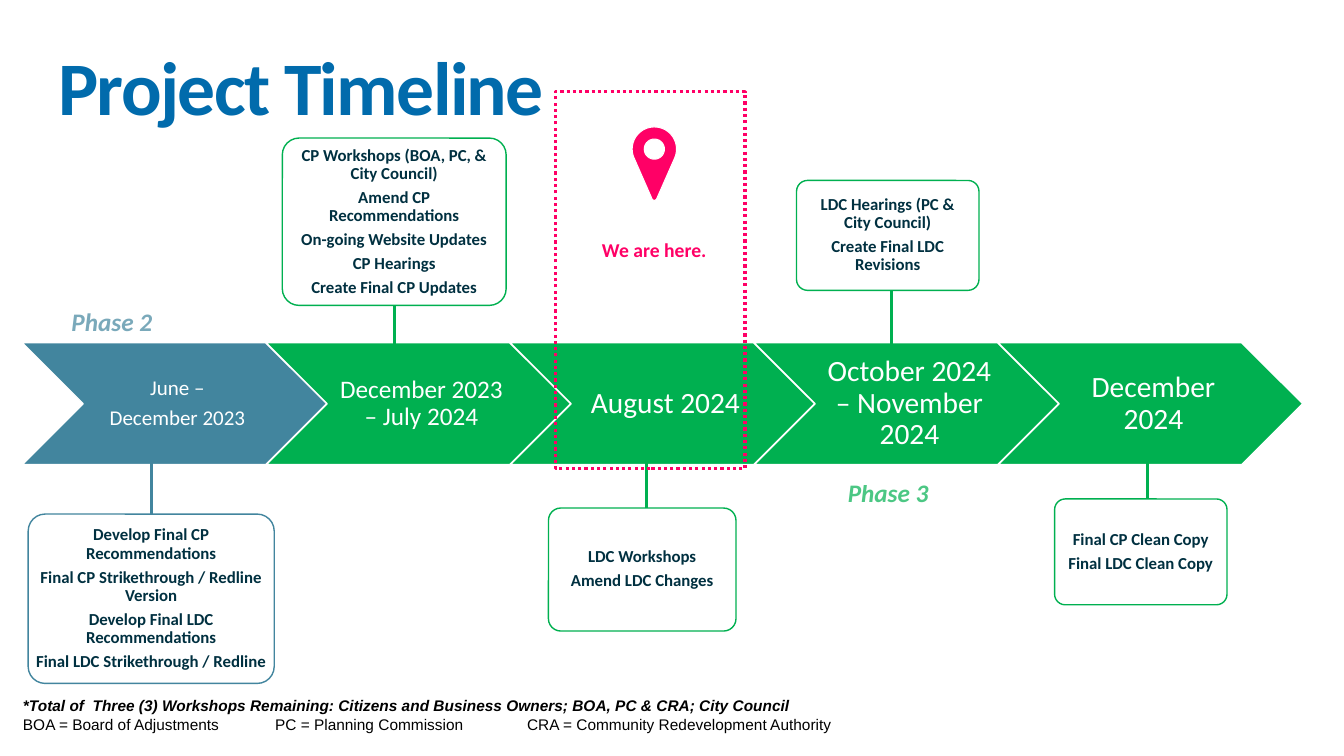
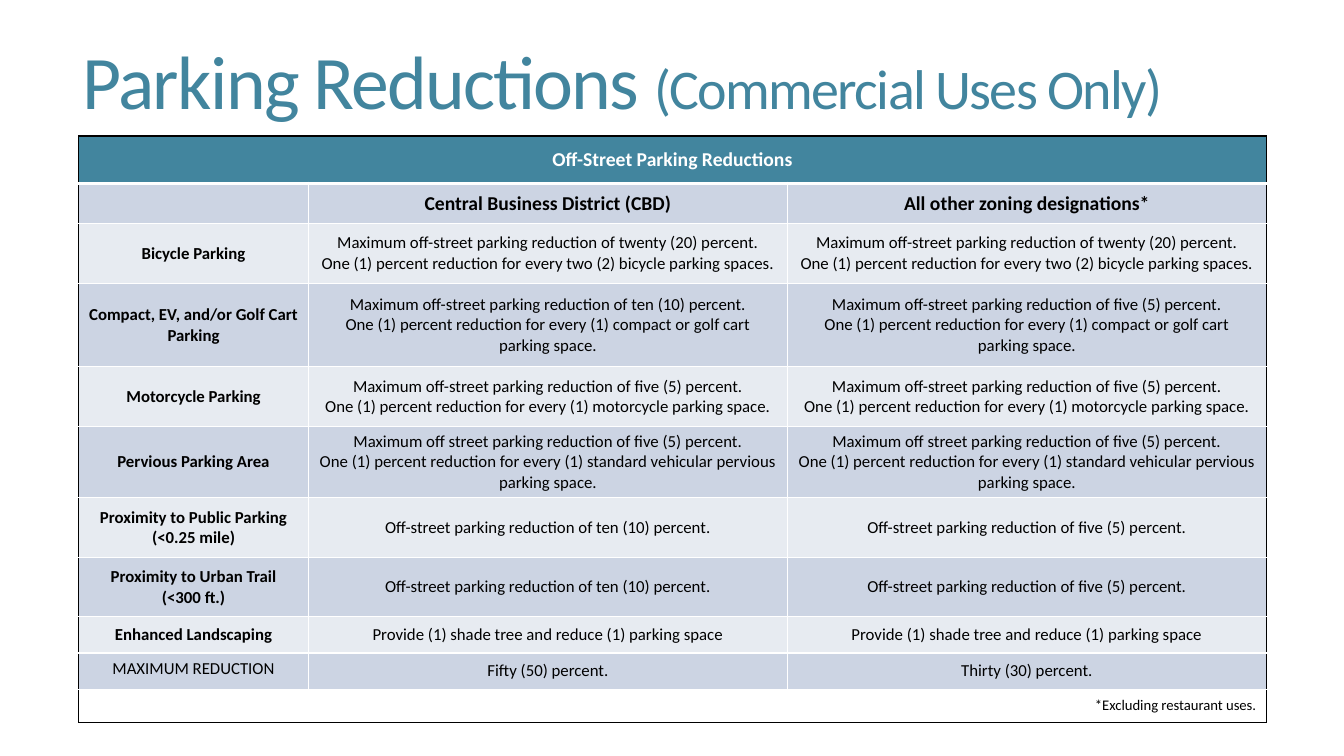
from dataclasses import dataclass, replace
from math import cos, radians, sin
from typing import Any, NamedTuple

from lxml.etree import SubElement
from pptx import Presentation
from pptx.dml.color import RGBColor as Rgb
from pptx.enum.dml import MSO_LINE as Dash
from pptx.enum.shapes import MSO_CONNECTOR as Link, MSO_SHAPE as Kind
from pptx.enum.text import MSO_ANCHOR as Anchor, PP_ALIGN as Align
from pptx.oxml.ns import qn
from pptx.util import Inches, Pt

# Shared colours and formats
HUES = {
    "blue": "016BAC", "teal": "42859E", "green": "00B050", "pink": "FF0066",
    "navy": "003040", "white": "FFFFFF", "black": "000000",
    "dark": "CCD4E3", "light": "E7EBF1",
}


@dataclass(frozen=True)
class Look:
    size: float
    hue: str = "black"
    bold: bool = False
    italic: bool = False
    face: str = "Calibri"
    track: int = 0
    alpha: int = 100


class Box(NamedTuple):
    left: float
    top: float
    width: float
    height: float


class Step(NamedTuple):
    hue: str
    size: float
    lines: list[str]


class Card(NamedTuple):
    box: Box
    hue: str
    pad: float
    stem: float
    end: float
    lines: list[str]


class Row(NamedTuple):
    height: float
    label: list[str]
    core: list[str]
    other: list[str]


TITLE = Look(54, "teal", track=-120)
NOTE = Look(11, face="Arial")
PHASE = Look(18, bold=True, italic=True, alpha=70)
CENTER = {"alignment": Align.CENTER}


# Drawing tools
def put(item: Any, form: dict[str, Any]) -> None:
    for name, value in form.items():
        setattr(item, name, value)


def tone(hue: str) -> Rgb:
    return Rgb.from_string(HUES[hue])


def paint(fill: Any, hue: str) -> None:
    fill.solid()
    fill.fore_color.rgb = tone(hue)


def fade(node: Any, alpha: int) -> None:
    color = next(node.iter(qn("a:srgbClr")))
    SubElement(color, qn("a:alpha")).set("val", str(alpha * 1000))


def pads(left: float, top: float, right: float, low: float) -> dict[str, Any]:
    sides = ("left", "top", "right", "bottom")
    return {f"margin_{side}": Inches(gap) for side, gap in zip(sides, (left, top, right, low))}


def add_run(para: Any, text: str, look: Look) -> None:
    run = para.add_run()
    run.text = text
    put(run.font, {"name": look.face, "size": Pt(look.size),
                   "bold": look.bold, "italic": look.italic})
    run.font.color.rgb = tone(look.hue)
    if look.track:
        run._r.get_or_add_rPr().set("spc", str(look.track))
    if look.alpha < 100:
        fade(run._r, look.alpha)


def write(frame: Any, lines: list[str], look: Look, form: dict[str, Any]) -> None:
    for num, text in enumerate(lines):
        para = frame.add_paragraph() if num else frame.paragraphs[0]
        put(para, form)
        add_run(para, text, look)


def add_text(slide: Any, box: Box, lines: list[str], look: Look,
             form: dict[str, Any] | None = None) -> Any:
    frame = slide.shapes.add_textbox(*map(Inches, box)).text_frame
    frame.word_wrap = True
    write(frame, lines, look, form or {})
    return frame


def add_title(slide: Any, box: Box, parts: list[tuple[str, Look]]) -> None:
    frame = add_text(slide, box, [], TITLE)
    frame.vertical_anchor = Anchor.MIDDLE
    para = frame.paragraphs[0]
    para.line_spacing = 0.85
    for text, look in parts:
        add_run(para, text, look)


def add_form(slide: Any, kind: Kind, box: Box, line: str, width: float,
             fill: str | None = None) -> Any:
    shape = slide.shapes.add_shape(kind, *map(Inches, box))
    shape.shadow.inherit = False
    if fill:
        paint(shape.fill, fill)
    else:
        shape.fill.background()
    paint(shape.line.fill, line)
    shape.line.width = Pt(width)
    return shape


def fill_form(shape: Any, lines: list[str], look: Look, inset: dict[str, Any]) -> None:
    frame = shape.text_frame
    put(frame, {"word_wrap": True, "vertical_anchor": Anchor.MIDDLE} | inset)
    gap = Pt(round(look.size * 0.35, 2))
    write(frame, lines, look, CENTER | {"line_spacing": 0.9, "space_after": gap})


# Timeline slide
STEP, BAND = 2.42, 3.4
STEPS = [
    Step("teal", 15, ["June –", "December 2023"]),
    Step("green", 18, ["December 2023 – July 2024"]),
    Step("green", 21, ["August 2024"]),
    Step("green", 21, ["October 2024 – November 2024"]),
    Step("green", 21, ["December 2024"]),
]
CARDS = [
    Card(Box(0.28, 5.1, 2.44, 1.68), "teal", 0, 1.5, 4.45,
         ["Develop Final CP Recommendations", "Final CP Strikethrough / Redline Version",
          "Develop Final LDC Recommendations", "Final LDC Strikethrough / Redline"]),
    Card(Box(2.8, 1.37, 2.22, 1.66), "green", 0.07, 3.91, 3.44,
         ["CP Workshops (BOA, PC, & City Council)", "Amend CP Recommendations",
          "On-going Website Updates", "CP Hearings", "Create Final CP Updates"]),
    Card(Box(5.44, 5.04, 1.86, 1.22), "green", 0.07, 6.41, 4.56,
         ["LDC Workshops", "Amend LDC Changes"]),
    Card(Box(7.9, 1.79, 1.81, 1.09), "green", 0.07, 8.84, 3.43,
         ["LDC Hearings (PC & City Council)", "Create Final LDC Revisions"]),
    Card(Box(10.46, 4.95, 1.71, 1.05), "green", 0.07, 11.38, 4.5,
         ["Final CP Clean Copy", "Final LDC Clean Copy"]),
]


def add_card(slide: Any, card: Card) -> None:
    box = card.box
    shape = add_form(slide, Kind.ROUNDED_RECTANGLE, box, card.hue, 1, "white")
    shape.adjustments[0] = 0.1
    fade(shape._element.spPr, 90)
    fill_form(shape, card.lines, Look(12, "navy", bold=True),
              pads(card.pad, 0.05, card.pad, 0.05))
    # Stem between card and band
    above = box.top < BAND
    edge = box.top + box.height if above else box.top
    ends = (card.stem, edge, card.stem, card.end)
    stem = slide.shapes.add_connector(Link.STRAIGHT, *map(Inches, ends))
    paint(stem.line.fill, card.hue)
    stem.line.width = Pt(2.25)
    SubElement(stem._element.spPr, qn("a:effectLst"))
    if abs(box.left + box.width / 2 - card.stem) < 0.01:
        stem.begin_connect(shape, 2 if above else 0)


def add_pin(slide: Any, mid: float, top: float) -> None:
    def ring(size: float, turns: range) -> list[tuple[int, int]]:
        return [(Inches(mid + size * cos(radians(turn))),
                 Inches(top + 0.22 - size * sin(radians(turn)))) for turn in turns]

    rim = ring(0.22, range(-23, 204, 6))
    tip = [(Inches(mid + side), Inches(top + drop))
           for side, drop in ((-0.02, 0.72), (0, 0.73), (0.02, 0.72))]
    hole = ring(0.1, range(360, 0, -10))
    draft = slide.shapes.build_freeform(*rim[0])
    draft.add_line_segments(rim[1:] + tip)
    draft.move_to(*hole[0])
    draft.add_line_segments(hole[1:])
    pin = draft.convert_to_shape()
    pin.shadow.inherit = False
    paint(pin.fill, "pink")
    paint(pin.line.fill, "white")
    pin.line.width = Pt(0.75)


def draw_time(slide: Any) -> None:
    add_title(slide, Box(0.48, 0.15, 11.78, 1.53),
              [("Project Timeline", replace(TITLE, hue="blue", bold=True))])
    for num, step in enumerate(STEPS):
        box = Box(0.22 + num * STEP, BAND, 3.02, 1.21)
        shape = add_form(slide, Kind.CHEVRON, box, "white", 1, step.hue)
        fill_form(shape, step.lines, Look(step.size, "white"), pads(0.09, 0.05, 0.03, 0.05))
    for card in CARDS:
        add_card(slide, card)
    add_text(slide, Box(0.61, 2.99, 1.19, 0.4), ["Phase 2"], replace(PHASE, hue="teal"))
    add_text(slide, Box(8.31, 4.69, 1.08, 0.4), ["Phase 3"], replace(PHASE, hue="green"))
    # Marker for the current stage
    frame = add_form(slide, Kind.RECTANGLE, Box(5.51, 0.91, 1.88, 3.74), "pink", 2.25)
    frame.line.dash_style = Dash.ROUND_DOT
    add_text(slide, Box(5.86, 2.31, 1.26, 0.35), ["We are here."],
             Look(14, "pink", bold=True), CENTER)
    add_pin(slide, 6.49, 1.26)
    # Footnote with tab stops
    note = add_text(slide, Box(0.13, 6.86, 8.3, 0.6), [
        "*Total of  Three (3) Workshops Remaining: Citizens and Business Owners; "
        "BOA, PC & CRA; City Council"], replace(NOTE, bold=True, italic=True))
    para = note.add_paragraph()
    tabs = SubElement(para._p.get_or_add_pPr(), qn("a:tabLst"))
    for stop in (2.5, 5):
        tab = SubElement(tabs, qn("a:tab"))
        tab.set("pos", str(Inches(stop)))
        tab.set("algn", "l")
    add_run(para, "BOA = Board of Adjustments\tPC = Planning Commission\t"
                  "CRA = Community Redevelopment Authority", NOTE)


# Parking slide
def limit(share: str, name: str = "off-street") -> str:
    return f"Maximum {name} parking reduction of {share} percent."


def flat(share: str) -> list[str]:
    return [f"Off-street parking reduction of {share} percent."]


def each(unit: str) -> str:
    return f"One (1) percent reduction for every {unit}."


FIVE, TEN, TWENTY = "five (5)", "ten (10)", "twenty (20)"
BIKE = [limit(TWENTY), each("two (2) bicycle parking spaces")]
CART = each("(1) compact or golf cart parking space")
MOTOR = [limit(FIVE), each("(1) motorcycle parking space")]
PERV = [limit(FIVE, "off street"), each("(1) standard vehicular pervious parking space")]
TREE = ["Provide (1) shade tree and reduce (1) parking space"]
ROWS = [
    Row(0.47, ["Off-Street Parking Reductions"], [], []),
    Row(0.4, [], ["Central Business District (CBD)"], ["All other zoning designations*"]),
    Row(0.59, ["Bicycle Parking"], BIKE, BIKE),
    Row(0.83, ["Compact, EV, and/or Golf Cart Parking"], [limit(TEN), CART], [limit(FIVE), CART]),
    Row(0.59, ["Motorcycle Parking"], MOTOR, MOTOR),
    Row(0.71, ["Pervious Parking Area"], PERV, PERV),
    Row(0.59, ["Proximity to Public Parking", "(<0.25 mile)"], flat(TEN), flat(FIVE)),
    Row(0.59, ["Proximity to Urban Trail", "(<300 ft.)"], flat(TEN), flat(FIVE)),
    Row(0.36, ["Enhanced Landscaping"], TREE, TREE),
    Row(0.36, ["MAXIMUM REDUCTION"], ["Fifty (50) percent."], ["Thirty (30) percent."]),
    Row(0.33, ["*Excluding restaurant uses."], [], []),
]
COLS = (2.28, 4.75, 4.75)


def edge(cell: Any, side: str, hue: str, width: float) -> None:
    line = SubElement(cell._tc.get_or_add_tcPr(), qn(f"a:ln{side}"))
    line.set("w", str(Pt(width)))
    fill = SubElement(line, qn("a:solidFill"))
    SubElement(fill, qn("a:srgbClr")).set("val", HUES[hue])


def style(row: int, col: int) -> tuple[str, Look]:
    last = len(ROWS) - 1
    if row == 0:
        return "teal", Look(14, "white", bold=True)
    if row == last:
        return "white", Look(10.5)
    bold = row == 1 or (col == 0 and row < last - 1)
    return ("dark" if row % 2 else "light"), Look(14 if row == 1 else 12, bold=bold)


def draw_park(slide: Any) -> None:
    add_title(slide, Box(0.72, 0.41, 11.78, 0.89),
              [("Parking Reductions ", TITLE),
               ("(Commercial Uses Only)", replace(TITLE, size=40))])
    last = len(ROWS) - 1
    box = Box(0.78, 1.35, sum(COLS), sum(row.height for row in ROWS))
    table = slide.shapes.add_table(len(ROWS), len(COLS), *map(Inches, box)).table
    put(table, {"first_row": False, "horz_banding": False})
    for col, width in zip(table.columns, COLS):
        col.width = Inches(width)
    for num in (0, last):
        table.cell(num, 0).merge(table.cell(num, 2))
    for num, row in enumerate(ROWS):
        table.rows[num].height = Inches(row.height)
        for col, lines in enumerate((row.label, row.core, row.other)):
            cell = table.cell(num, col)
            if cell.is_spanned:
                continue
            wide = cell.is_merge_origin
            outer = {"L": col == 0, "R": col == 2 or wide, "T": num == 0, "B": num == last}
            for side, rim in outer.items():
                thick = (num, side) in ((0, "B"), (1, "T"))
                edge(cell, side, "black" if rim else "white", 3 if thick else 1)
            fill, look = style(num, col)
            paint(cell.fill, fill)
            raised = num == last - 1 and col == 0
            cell.vertical_anchor = Anchor.TOP if raised else Anchor.MIDDLE
            write(cell.text_frame, lines, look,
                  {"alignment": Align.RIGHT if num == last else Align.CENTER})


def main() -> None:
    deck = Presentation()
    put(deck, {"slide_width": Inches(13.33), "slide_height": Inches(7.5)})
    for draw in (draw_time, draw_park):
        draw(deck.slides.add_slide(deck.slide_layouts[6]))
    deck.save("out.pptx")


if __name__ == "__main__":
    main()
